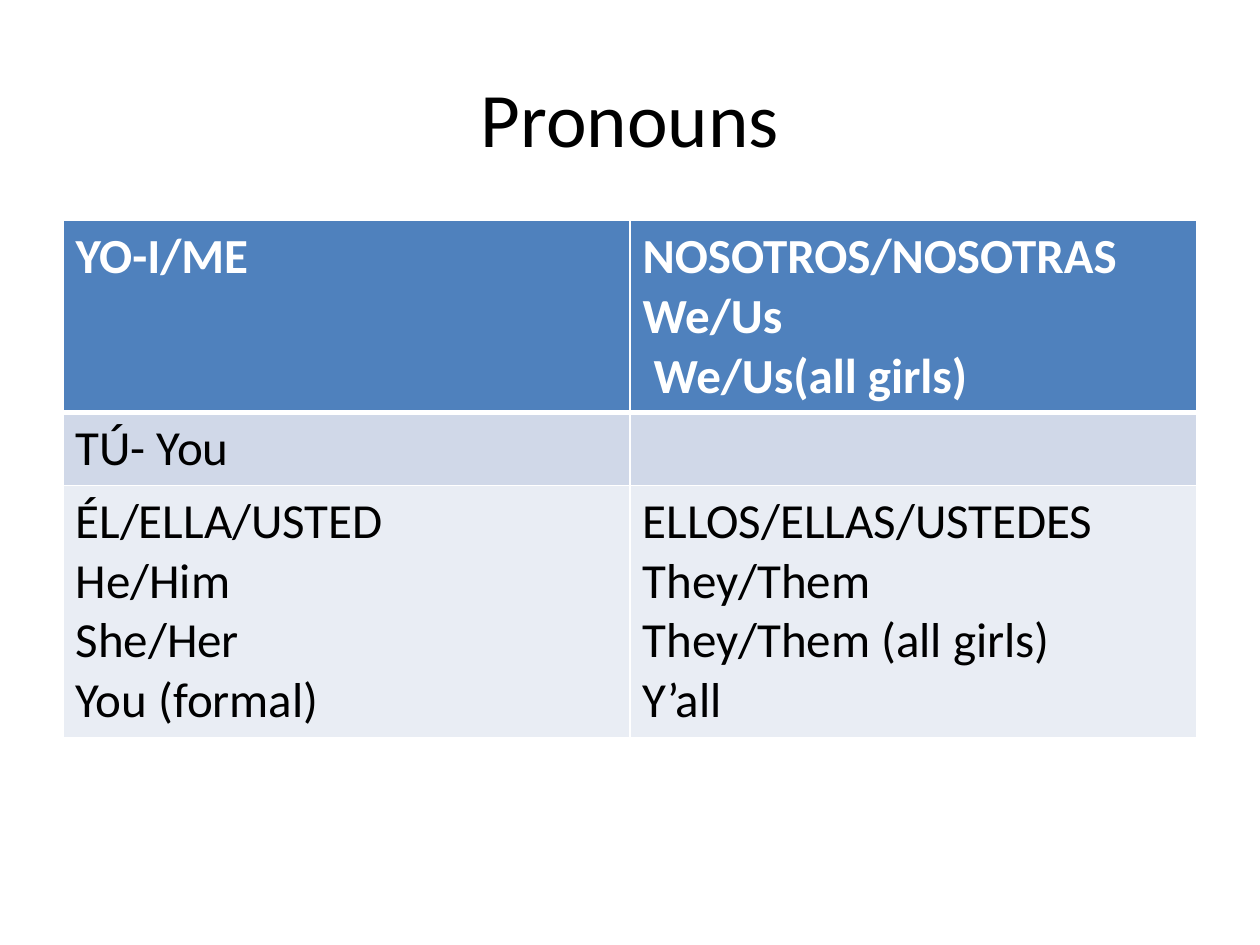
import pptx
import pptx.util
import pptx.dml.color
import pptx.enum.text
import pptx.oxml.ns
from lxml import etree

Inches = pptx.util.Inches
Pt = pptx.util.Pt

COLORS = {
    "text": "000000",
    "header_text": "FFFFFF",
    "header": "4F81BD",
    "band_dark": "D0D8E8",
    "band_light": "E9EDF4",
    "border": "FFFFFF",
}
FONT = "Calibri"

PRONOUNS = [
    ("YO-I/ME", "NOSOTROS/NOSOTRAS\nWe/Us\n We/Us(all girls)"),
    ("TÚ- You", ""),
    ("ÉL/ELLA/USTED\nHe/Him\nShe/Her\nYou (formal)",
     "ELLOS/ELLAS/USTEDES\nThey/Them\nThey/Them (all girls)\nY’all"),
]
ROW_HEIGHTS = [1.52, 0.57, 2]
ROW_FILLS = ["header", "band_dark", "band_light"]


def rgb(name):
    return pptx.dml.color.RGBColor.from_string(COLORS[name])


def format_text(text_frame, size, color, bold=False):
    for paragraph in text_frame.paragraphs:
        for run in paragraph.runs:
            run.font.name = FONT
            run.font.size = Pt(size)
            run.font.bold = bold
            run.font.color.rgb = rgb(color)


def set_borders(cell, widths):
    """Draw the cell borders; widths maps each side (L, R, T, B) to points."""
    properties = cell._tc.get_or_add_tcPr()
    qn = pptx.oxml.ns.qn
    for side, width in widths.items():
        line = etree.SubElement(properties, qn(f"a:ln{side}"), w=str(Pt(width)))
        fill = etree.SubElement(line, qn("a:solidFill"))
        etree.SubElement(fill, qn("a:srgbClr"), val=COLORS["border"])


def add_title(slide, left, top, width, height):
    title = slide.shapes.title
    title.left, title.top, title.width, title.height = left, top, width, height
    title.text_frame.text = "Pronouns"
    title.text_frame.vertical_anchor = pptx.enum.text.MSO_ANCHOR.MIDDLE
    title.text_frame.paragraphs[0].alignment = pptx.enum.text.PP_ALIGN.CENTER
    format_text(title.text_frame, 44, "text")


def add_pronoun_table(slide, left, top, width):
    height = Inches(sum(ROW_HEIGHTS))
    table = slide.shapes.add_table(
        len(PRONOUNS), len(PRONOUNS[0]), left, top, width, height).table
    for row_index, texts in enumerate(PRONOUNS):
        table.rows[row_index].height = Inches(ROW_HEIGHTS[row_index])
        is_header = row_index == 0
        for column_index, text in enumerate(texts):
            cell = table.cell(row_index, column_index)
            set_borders(cell, {"L": 1, "R": 1,
                               "T": 3 if row_index == 1 else 1,
                               "B": 3 if is_header else 1})
            cell.fill.solid()
            cell.fill.fore_color.rgb = rgb(ROW_FILLS[row_index])
            cell.text_frame.text = text
            format_text(cell.text_frame, 28,
                        "header_text" if is_header else "text", is_header)


def main():
    presentation = pptx.Presentation()
    presentation.slide_width = Inches(10)
    presentation.slide_height = Inches(7.5)
    # Title-only layout
    slide = presentation.slides.add_slide(presentation.slide_layouts[5])
    add_title(slide, Inches(0.5), Inches(0.3), Inches(9), Inches(1.25))
    add_pronoun_table(slide, Inches(0.5), Inches(1.75), Inches(9))
    presentation.save("out.pptx")


if __name__ == "__main__":
    main()
